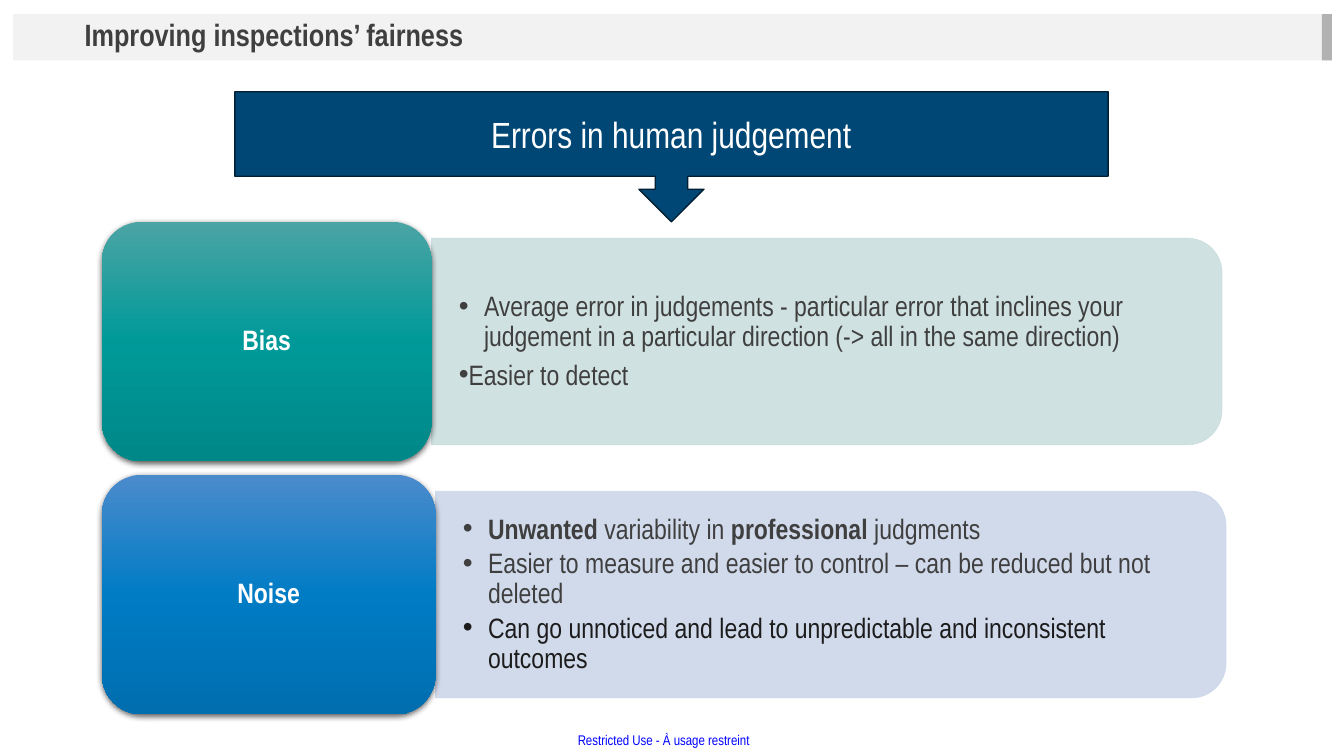
from dataclasses import dataclass

from lxml import etree
from pptx import Presentation
from pptx.dml.color import RGBColor
from pptx.enum.shapes import MSO_SHAPE
from pptx.enum.text import MSO_ANCHOR, MSO_AUTO_SIZE, PP_ALIGN
from pptx.oxml.ns import qn
from pptx.shapes.autoshape import Shape
from pptx.text.text import TextFrame
from pptx.util import Inches, Pt

RECT, ROUND = MSO_SHAPE.RECTANGLE, MSO_SHAPE.ROUNDED_RECTANGLE
CALL, HALF = MSO_SHAPE.DOWN_ARROW_CALLOUT, MSO_SHAPE.ROUND_2_SAME_RECTANGLE
TOP, MIDDLE = MSO_ANCHOR.TOP, MSO_ANCHOR.MIDDLE
LEFT, CENTER = PP_ALIGN.LEFT, PP_ALIGN.CENTER
NO_FIT = MSO_AUTO_SIZE.NONE
FONT, DARK, WHITE = "Arial Narrow", "3F3F3F", "FFFFFF"
WIDE, HIGH = Inches(13.33), Inches(7.5)


@dataclass(frozen=True)
class Box:
    """Left, top, width and height in percent of the slide."""
    x: float
    y: float
    w: float
    h: float

    def emu(self) -> tuple[int, int, int, int]:
        return (round(self.x * WIDE / 100), round(self.y * HIGH / 100),
                round(self.w * WIDE / 100), round(self.h * HIGH / 100))


@dataclass(frozen=True)
class Run:
    text: str
    size: int = 20
    color: str = DARK
    bold: bool = False


@dataclass(frozen=True)
class Item:
    runs: tuple[Run, ...]
    margin: float = 0.25
    line: float = 0.9
    after: int = 3


@dataclass(frozen=True)
class Topic:
    name: str
    width: float
    shades: tuple[str, str, str]
    tint: str
    items: tuple[Item, ...]


TOPICS = (
    Topic("Bias", 24.53, ("4BA4A4", "009999", "008888"), "CBDEDE", (
        Item((Run("Average error in judgements - particular error\u00a0that inclines your "
                  "judgement in a particular direction (-> all in the same direction)"),)),
        Item((Run("Easier to detect"),), margin=0, line=1.0, after=7))),
    Topic("Noise", 24.83, ("4B8BCC", "007CC5", "006EAF"), "CCD7E9", (
        Item((Run("Unwanted", bold=True), Run(" variability in "),
              Run("professional", bold=True), Run(" judgments"))),
        Item((Run("Easier to measure and easier to control – can be reduced "
                  "but not deleted"),)),
        Item((Run("Can go unnoticed and lead to unpredictable and inconsistent "
                  "outcomes", color="1C1C1C"),)))),
)
CARD_X, CARD_Y, CARD_H, PITCH = 7.58, 29.33, 31.7, 33.47
PANEL_W, PANEL_H, LIST_W, LIST_H = 58.81, 27.33, 58.06, 24.67


def paint(color: str) -> RGBColor:
    return RGBColor.from_string(color)


def node(parent, tag: str, **attrs: object):
    return etree.SubElement(parent, qn(tag), {k: str(v) for k, v in attrs.items()})


def place(shape: Shape, box: Box) -> None:
    shape.left, shape.top, shape.width, shape.height = box.emu()


def add(slide, kind: int, box: Box, fill: str = "", edge: str = "",
        weight: float = 1) -> Shape:
    shape = slide.shapes.add_shape(kind, *box.emu())
    shape.shadow.inherit = False
    if fill:
        shape.fill.solid()
        shape.fill.fore_color.rgb = paint(fill)
    if edge:
        shape.line.color.rgb = paint(edge)
        shape.line.width = Pt(weight)
    else:
        shape.line.fill.background()
    return shape


def write(para, runs: tuple[Run, ...], align: int = LEFT, line: float = 1.0,
          after: int = 0) -> None:
    para.alignment, para.line_spacing = align, line
    para.space_before, para.space_after = Pt(0), Pt(after)
    for part in runs:
        run = para.add_run()
        run.text = part.text
        font = run.font
        font.name, font.size, font.bold = FONT, Pt(part.size), part.bold
        font.color.rgb = paint(part.color)


def setup(frame: TextFrame, anchor: int, side: float = 0.1, edge: float = 0.05) -> None:
    frame.word_wrap, frame.auto_size, frame.vertical_anchor = True, NO_FIT, anchor
    frame.margin_left = frame.margin_right = Inches(side)
    frame.margin_top = frame.margin_bottom = Inches(edge)


def panel(slide, box: Box, tint: str) -> None:
    """Strip with rounded right corners: a half-rounded shape on its side."""
    shape = add(slide, HALF, box, tint, tint, 0.5)
    x, y, w, h = box.emu()
    shape.left, shape.top = x + (w - h) // 2, y + (h - w) // 2
    shape.width, shape.height, shape.rotation = h, w, 90
    for color in shape.element.spPr.iter(qn("a:srgbClr")):
        node(color, "a:alpha", val=90000)


def card(slide, box: Box, topic: Topic) -> None:
    shape = add(slide, ROUND, box)
    props = shape.element.spPr
    # Three-stop gradient from top to bottom
    grad = node(props, "a:gradFill", rotWithShape=1)
    stops = node(grad, "a:gsLst")
    for i, shade in enumerate(topic.shades):
        node(node(stops, "a:gs", pos=i * 50000), "a:srgbClr", val=shade)
    node(grad, "a:lin", ang=5400000, scaled=0)
    props.find(qn("a:prstGeom")).addnext(grad)
    # Soft shadow below
    cast = node(props.find(qn("a:effectLst")), "a:outerShdw", blurRad=Pt(4.5),
                dist=Pt(1.5), dir=5400000, rotWithShape=0)
    node(node(cast, "a:srgbClr", val="000000"), "a:alpha", val=63000)
    setup(shape.text_frame, MIDDLE, 0.08, 0.04)
    write(shape.text_frame.paragraphs[0], (Run(topic.name, 20, WHITE, True),), CENTER, 0.9)


def fill_list(holder: Shape, box: Box, items: tuple[Item, ...]) -> None:
    place(holder, box)
    frame = holder.text_frame
    setup(frame, MIDDLE, 0.27, 0.14)
    for i, item in enumerate(items):
        para = frame.add_paragraph() if i else frame.paragraphs[0]
        props = para._p.get_or_add_pPr()
        props.set("marL", str(Inches(item.margin)))
        props.set("indent", str(Inches(-0.25)))
        node(props, "a:buChar", char="•")
        write(para, item.runs, LEFT, item.line, item.after)


def raise_up(shape: Shape) -> None:
    shape.element.getparent().append(shape.element)


def main() -> None:
    deck = Presentation()
    deck.slide_width, deck.slide_height = WIDE, HIGH
    slide = deck.slides.add_slide(deck.slide_layouts[3])
    title, *lists = slide.placeholders

    # Header band, end tab and title
    add(slide, RECT, Box(0.98, 1.87, 98.12, 6.13), "F2F2F2")
    add(slide, RECT, Box(98.35, 1.87, 0.75, 6.13), "B2B2B2")
    place(title, Box(5.55, 2, 92.8, 6.13))
    setup(title.text_frame, TOP)
    write(title.text_frame.paragraphs[0],
          (Run("Improving inspections’ fairness", 22, bold=True),), line=0.9)
    raise_up(title)

    # Footer mark
    foot = slide.shapes.add_textbox(*Box(42.99, 96.8, 14.33, 2.27).emu()).text_frame
    setup(foot, TOP, 0, 0)
    foot.word_wrap = False
    write(foot.paragraphs[0], (Run("Restricted Use - À usage restreint", 10, "0000FF"),))

    # Heading with arrow
    head = add(slide, CALL, Box(17.48, 12.13, 64.97, 17.2), "004775", "001F33")
    setup(head.text_frame, MIDDLE)
    write(head.text_frame.paragraphs[0],
          (Run("Errors in human judgement", 26, WHITE),), CENTER)

    # One row per topic: strip, list, card
    for row, (topic, holder) in enumerate(zip(TOPICS, lists)):
        top, edge = CARD_Y + row * PITCH, CARD_X + topic.width
        panel(slide, Box(edge, top + (CARD_H - PANEL_H) / 2, PANEL_W, PANEL_H), topic.tint)
        fill_list(holder, Box(edge, top + (CARD_H - LIST_H) / 2, LIST_W, LIST_H), topic.items)
        raise_up(holder)
        card(slide, Box(CARD_X, top, topic.width, CARD_H), topic)
    deck.save("out.pptx")


if __name__ == "__main__":
    main()
